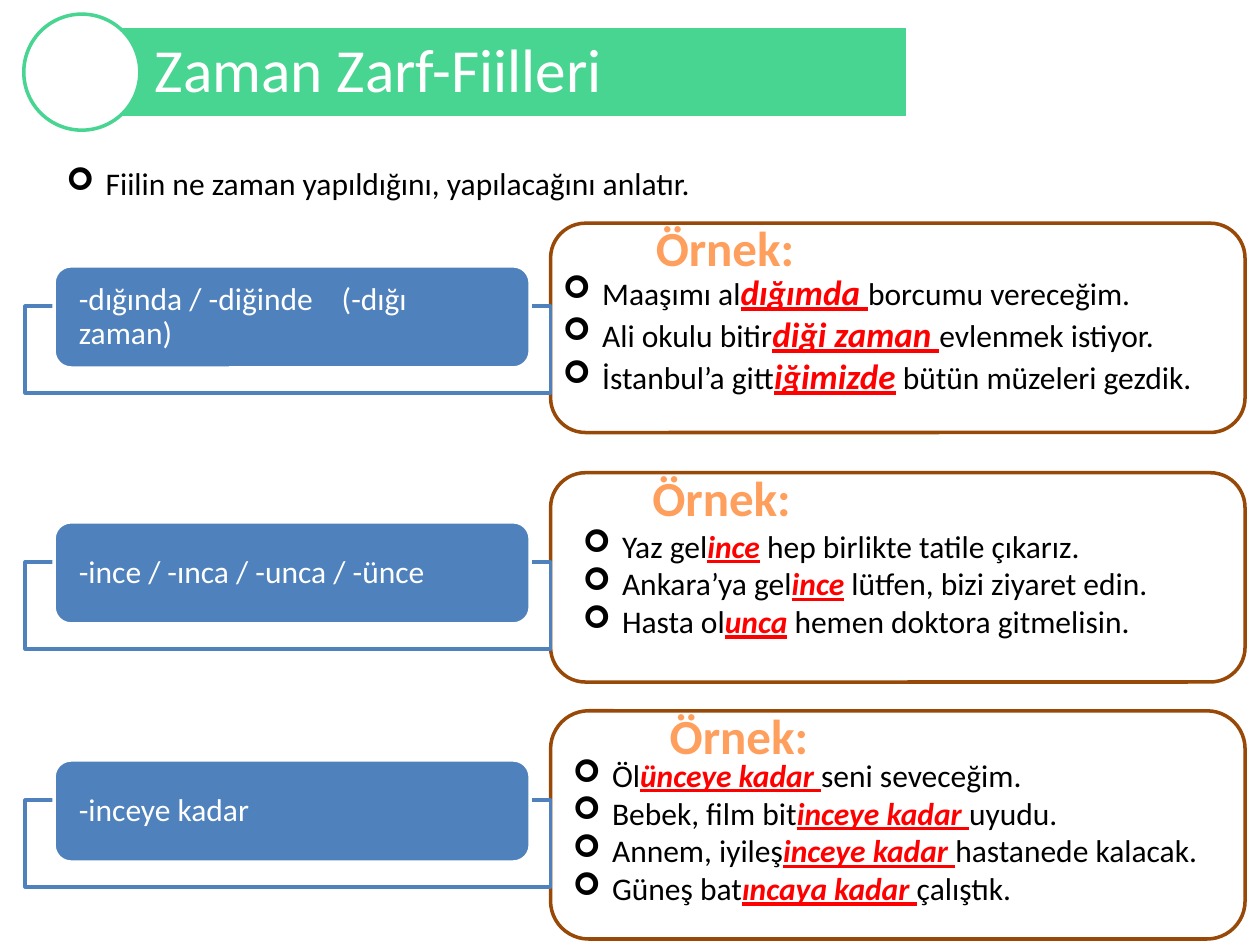
from lxml.etree import SubElement
from pptx import Presentation
from pptx.dml.color import RGBColor
from pptx.enum.shapes import MSO_SHAPE
from pptx.enum.text import MSO_ANCHOR, MSO_AUTO_SIZE, PP_ALIGN
from pptx.oxml.ns import qn
from pptx.util import Cm, Pt

GREEN, BLUE, BROWN = "48D491", "4F81BD", "984807"
ORANGE, RED, BLACK, WHITE = "FF9F5D", "FF0000", "000000", "FFFFFF"

CARDS = [
    dict(top=4.5, height=4.22, bar=1.67, head=1.85, list=(0, 0.83, 13.34), size=20,
         label="-dığında / -diğinde\t(-dığı zaman)",
         lines=[("Maaşımı al", "dığımda ", "borcumu vereceğim."),
                ("Ali okulu bitir", "diği zaman ", "evlenmek istiyor."),
                ("İstanbul’a gitt", "iğimizde", " bütün müzeleri gezdik.")]),
    dict(top=9.53, height=4.22, bar=1.8, head=1.78, list=(0.4, 0.96, 13.2), size=18,
         label="-ince / -ınca / -unca / -ünce",
         lines=[("Yaz gel", "ince", " hep birlikte tatile çıkarız."),
                ("Ankara’ya gel", "ince", " lütfen, bizi ziyaret edin."),
                ("Hasta ol", "unca", " hemen doktora gitmelisin.")]),
    dict(top=14.33, height=4.6, bar=1.8, head=2.13, list=(0.2, 0.78, 13.8), size=18,
         label="-inceye kadar",
         lines=[("Öl", "ünceye kadar ", "seni seveceğim."),
                ("Bebek, film bit", "inceye kadar ", "uyudu."),
                ("Annem, iyileş", "inceye kadar ", "hastanede kalacak."),
                ("Güneş bat", "ıncaya kadar ", "çalıştık.")]),
]


def color(code):
    """Turn a hex string into a colour."""
    return RGBColor.from_string(code)


def paint(shape, fill, line):
    """Set the fill and the outline of a shape."""
    shape.fill.solid()
    shape.fill.fore_color.rgb = color(fill)
    shape.line.color.rgb = color(line)
    shape.line.width = Pt(2)


def style(run, size, code, bold=False):
    """Format one run."""
    run.font.name = "Calibri"
    run.font.size = Pt(size)
    run.font.bold = bold
    run.font.color.rgb = color(code)


def block(slide, kind, box, fill, line):
    """Add a flat shape in a box given in centimetres."""
    shape = slide.shapes.add_shape(kind, *map(Cm, box))
    shape.shadow.inherit = False
    paint(shape, fill, line)
    return shape


def label(slide, text, box):
    """Add the blue suffix label."""
    shape = block(slide, MSO_SHAPE.ROUNDED_RECTANGLE, box, BLUE, WHITE)
    frame = shape.text_frame
    frame.word_wrap = True
    frame.vertical_anchor = MSO_ANCHOR.MIDDLE
    frame.margin_left = frame.margin_right = Cm(0.4)
    frame.margin_top = frame.margin_bottom = 0
    frame.text = text
    par = frame.paragraphs[0]
    par.alignment = PP_ALIGN.LEFT
    par.line_spacing = 0.9
    style(par.runs[0], 18, WHITE)
    tabs = SubElement(par._p.get_or_add_pPr(), qn("a:tabLst"))
    SubElement(tabs, qn("a:tab"), pos=str(Cm(5.3)), algn="l")


def bullets(slide, lines, box, size=18, wrap=True):
    """Add a list whose middle run in each line is stressed."""
    frame = slide.shapes.add_textbox(*map(Cm, box)).text_frame
    frame.word_wrap = wrap
    for i, parts in enumerate(lines):
        par = frame.add_paragraph() if i else frame.paragraphs[0]
        props = par._p.get_or_add_pPr()
        props.set("marL", str(Cm(0.79)))
        props.set("indent", str(Cm(-0.79)))
        SubElement(props, qn("a:buFont"), typeface="Wingdings")
        SubElement(props, qn("a:buChar"), char="➢")
        for j, part in enumerate(parts):
            run = par.add_run()
            run.text = part
            mark = j == 1
            style(run, size if mark else 18, RED if mark else BLACK, mark)
            run.font.italic = run.font.underline = mark


def heading(slide, box):
    """Add the heading of an example card."""
    frame = slide.shapes.add_textbox(*map(Cm, box)).text_frame
    frame.word_wrap = False
    frame.text = "Örnek:"
    par = frame.paragraphs[0]
    par.alignment = PP_ALIGN.CENTER
    style(par.runs[0], 28, ORANGE, True)


def banner(slide, text, box):
    """Place the title bar and the ring at its left end."""
    left, top, width, height = box
    title = slide.shapes.title
    title.left, title.top, title.width, title.height = map(Cm, box)
    paint(title, GREEN, WHITE)
    frame = title.text_frame
    frame.text = text
    frame.auto_size = MSO_AUTO_SIZE.NONE
    frame.vertical_anchor = MSO_ANCHOR.MIDDLE
    frame.margin_left = Cm(1.47)
    par = frame.paragraphs[0]
    par.alignment = PP_ALIGN.LEFT
    par.line_spacing = 0.9
    style(par.runs[0], 35, WHITE)
    size = 2.34
    ring = (left - size / 2, top + (height - size) / 2, size, size)
    block(slide, MSO_SHAPE.OVAL, ring, WHITE, GREEN)


def card(slide, data, left, width):
    """Place one example card with the suffix label on its left."""
    top = data["top"]
    box = (left, top, width, data["height"])
    block(slide, MSO_SHAPE.ROUNDED_RECTANGLE, box, WHITE, BROWN)
    dx, dy, span = data["list"]
    bullets(slide, data["lines"], (left + dx, top + dy, span, 3.5), data["size"])
    heading(slide, (left + data["head"], top - 0.23, 3.33, 1.45))
    bar = top + data["bar"]
    block(slide, MSO_SHAPE.RECTANGLE, (left - 10.59, bar, 10.59, 1.75), WHITE, BLUE)
    label(slide, data["label"], (left - 10.01, bar - 0.81, 9.6, 2.06))


def main():
    """Build and save the slide."""
    deck = Presentation()
    deck.slide_width, deck.slide_height = Cm(25.4), Cm(19.05)
    slide = deck.slides.add_slide(deck.slide_layouts[5])
    banner(slide, "Zaman Zarf-Fiilleri", (1.65, 0.53, 16.66, 1.85))
    intro = "Fiilin ne zaman yapıldığını, yapılacağını anlatır."
    bullets(slide, [(intro,)], (1.09, 3.18, 13.23, 1.02), wrap=False)
    for data in CARDS:
        card(slide, data, 11.1, 14)
    deck.save("out.pptx")


if __name__ == "__main__":
    main()
